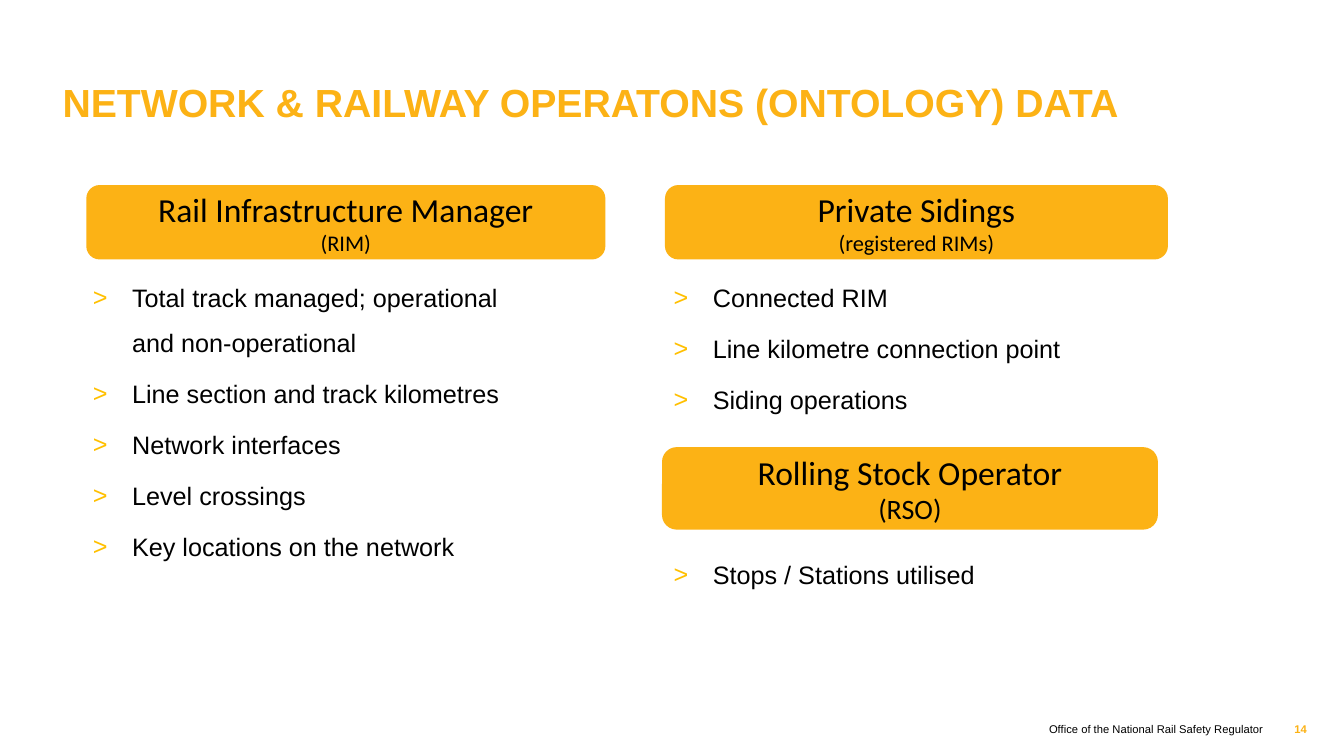
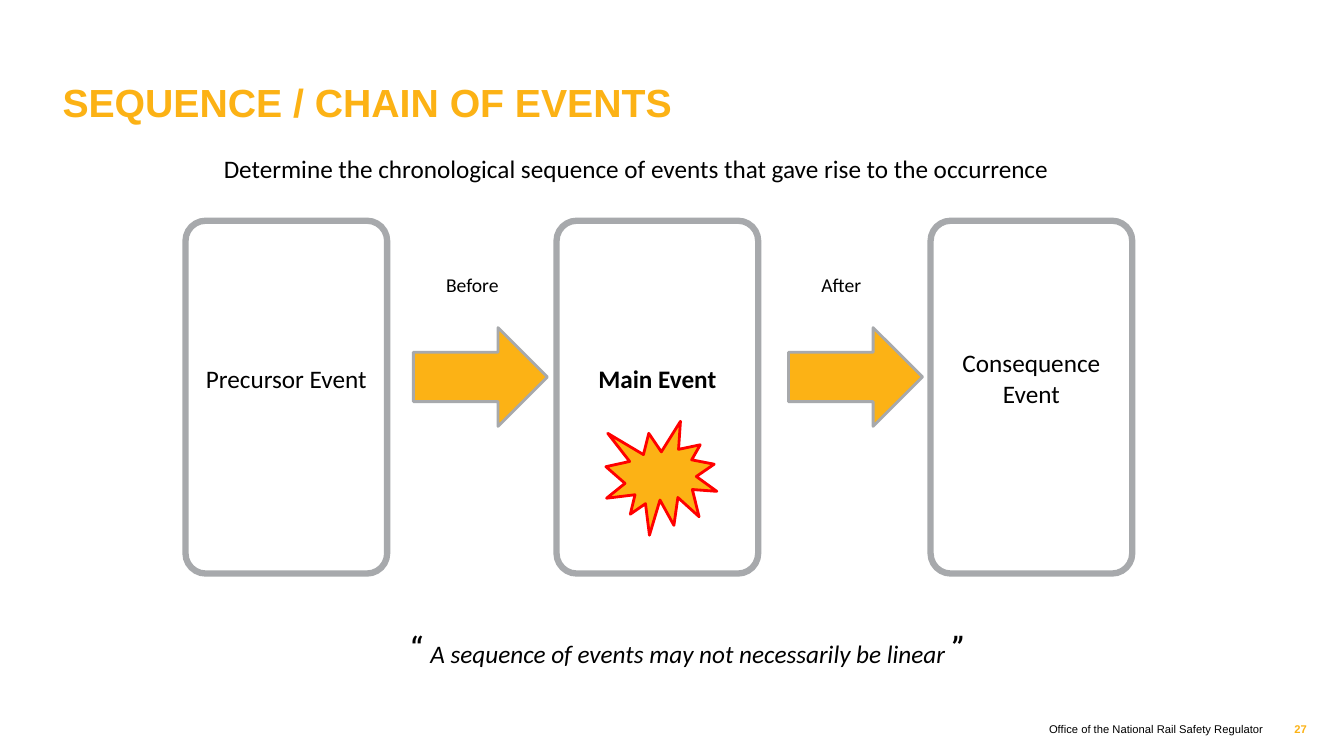
from lxml import etree
from pptx import Presentation
from pptx.dml.color import RGBColor
from pptx.enum.shapes import MSO_SHAPE
from pptx.enum.text import MSO_ANCHOR, MSO_AUTO_SIZE, PP_ALIGN
from pptx.oxml.ns import qn
from pptx.util import Inches, Pt

LEFT, CENTER, RIGHT = PP_ALIGN.LEFT, PP_ALIGN.CENTER, PP_ALIGN.RIGHT
TOP, MIDDLE = MSO_ANCHOR.TOP, MSO_ANCHOR.MIDDLE
ROUND, ARROW = MSO_SHAPE.ROUNDED_RECTANGLE, MSO_SHAPE.RIGHT_ARROW
BURST = MSO_SHAPE.EXPLOSION1

AMBER, GREY, BLACK, WHITE, RED = "FCB215", "A7A9AC", "000000", "FFFFFF", "FF0000"
BULLET = "FFC000"
HEAD, BODY, QUOTE = "Arial", "Calibri", "Roboto"


def write(shape, text, size, font=BODY, color=BLACK, align=CENTER,
          anchor=TOP, bold=False, italic=False):
    """Set the text of a shape and format every run in it."""
    frame = shape.text_frame
    frame.text = text
    frame.word_wrap = True
    frame.auto_size = MSO_AUTO_SIZE.NONE
    frame.vertical_anchor = anchor
    for para in frame.paragraphs:
        para.alignment = align
        for run in para.runs:
            run.font.size = Pt(size)
            run.font.name = font
            run.font.bold = bold
            run.font.italic = italic
            run.font.color.rgb = RGBColor.from_string(color)
    return frame


def draw(slide, kind, box, fill, line, width=2):
    """Add a preset shape with a flat fill and outline."""
    shape = slide.shapes.add_shape(kind, *map(Inches, box))
    shape.shadow.inherit = False
    shape.fill.solid()
    shape.fill.fore_color.rgb = RGBColor.from_string(fill)
    shape.line.color.rgb = RGBColor.from_string(line)
    shape.line.width = Pt(width)
    return shape


prs = Presentation()
prs.slide_width, prs.slide_height = Inches(13.33), Inches(7.5)
data = prs.slides.add_slide(prs.slide_layouts[4])
chain = prs.slides.add_slide(prs.slide_layouts[5])

# Title, footer and page number
for slide, title, page in [
    (data, "NETWORK & RAILWAY OPERATONS (ONTOLOGY) DATA", "14"),
    (chain, "SEQUENCE / CHAIN OF EVENTS", "27"),
]:
    head = slide.shapes.title
    head.left, head.top = Inches(0.52), Inches(0.68)
    head.width, head.height = Inches(11.82), Inches(0.66)
    write(head, title, 28, HEAD, AMBER, LEFT, MIDDLE, bold=True)
    for left, width, text, color, bold in [
        (9.37, 3.26, "Office of the National Rail Safety Regulator", BLACK, False),
        (12.65, 0.41, page, AMBER, True),
    ]:
        foot = slide.shapes.add_textbox(
            Inches(left), Inches(7.06), Inches(width), Inches(0.35))
        write(foot, text, 8, HEAD, color, RIGHT, MIDDLE, bold)

# Slide 1: headings and their lists
for box, name, note, size in [
    ((0.87, 1.85, 5.12, 0.71), "Rail Infrastructure Manager", "(RIM)", 16),
    ((6.61, 1.85, 4.96, 0.71), "Private Sidings", "(registered RIMs)", 16),
    ((6.58, 4.45, 4.89, 0.79), "Rolling Stock Operator", "(RSO)", 20),
]:
    pill = draw(data, ROUND, box, AMBER, AMBER)
    frame = write(pill, name + "\n" + note, 24, anchor=MIDDLE)
    frame.margin_top = frame.margin_bottom = 0
    frame.paragraphs[1].runs[0].font.size = Pt(size)

for idx, box, items in [
    (2, (0.82, 2.6, 4.67, 4.4), [
        "Total\u00a0track managed; operational and non-operational",
        "Line section and track kilometres",
        "Network interfaces",
        "Level crossings",
        "Key locations on the network",
    ]),
    (4, (6.58, 2.6, 5.01, 1.82), [
        "Connected RIM",
        "Line kilometre connection point",
        "Siding operations",
    ]),
    (1, (6.58, 5.35, 4.67, 1.19), ["Stops / Stations utilised"]),
]:
    body = data.placeholders[idx]
    body.left, body.top, body.width, body.height = map(Inches, box)
    frame = write(body, "\n".join(items), 18, HEAD, align=LEFT)
    for i, para in enumerate(frame.paragraphs):
        para.line_spacing = 1.5
        para.space_before = Pt(4 if i else 0)
        props = para._p.get_or_add_pPr()
        props.set("marL", str(Inches(0.39)))
        props.set("indent", str(-Inches(0.39)))
        tint = etree.SubElement(props, qn("a:buClr"))
        etree.SubElement(tint, qn("a:srgbClr"), val=BULLET)
        etree.SubElement(props, qn("a:buFont"), typeface=HEAD)
        etree.SubElement(props, qn("a:buChar"), char=">")

spare = data.placeholders[3].element
spare.getparent().remove(spare)

# Slide 2: event cards joined by arrows
for left, name, bold in [
    (1.84, "Precursor Event", False),
    (5.52, "Main Event", True),
    (9.23, "Consequence Event", False),
]:
    card = draw(chain, ROUND, (left, 2.19, 2, 3.5), WHITE, GREY, 4.5)
    card.adjustments[0] = 0.1
    frame = write(card, name, 18, anchor=MIDDLE, bold=bold)
    frame.margin_left = frame.margin_right = Inches(0.05)
    frame.margin_bottom = Inches(0.43)

for left in (4.1, 7.82):
    draw(chain, ARROW, (left, 3.25, 1.33, 0.98), AMBER, GREY)
draw(chain, BURST, (6.01, 4.18, 1.1, 1.13), AMBER, RED)

for box, text, size, font, align, italic in [
    ((0.97, 1.47, 10.68, 0.4),
     "Determine the chronological sequence of events that gave rise to the occurrence",
     18, BODY, CENTER, False),
    ((3.9, 2.66, 1.57, 0.34), "Before", 14, BODY, CENTER, False),
    ((7.56, 2.66, 1.57, 0.34), "After", 14, BODY, CENTER, False),
    ((4.17, 6.28, 5.47, 0.4), "A sequence of events may not necessarily be linear",
     18, BODY, LEFT, True),
    ((3.8, 6.18, 0.67, 0.5), "“", 24, QUOTE, CENTER, False),
    ((9.31, 6.18, 0.38, 0.5), "”", 24, QUOTE, CENTER, False),
]:
    label = chain.shapes.add_textbox(*map(Inches, box))
    write(label, text, size, font, align=align, italic=italic)

prs.save("out.pptx")
